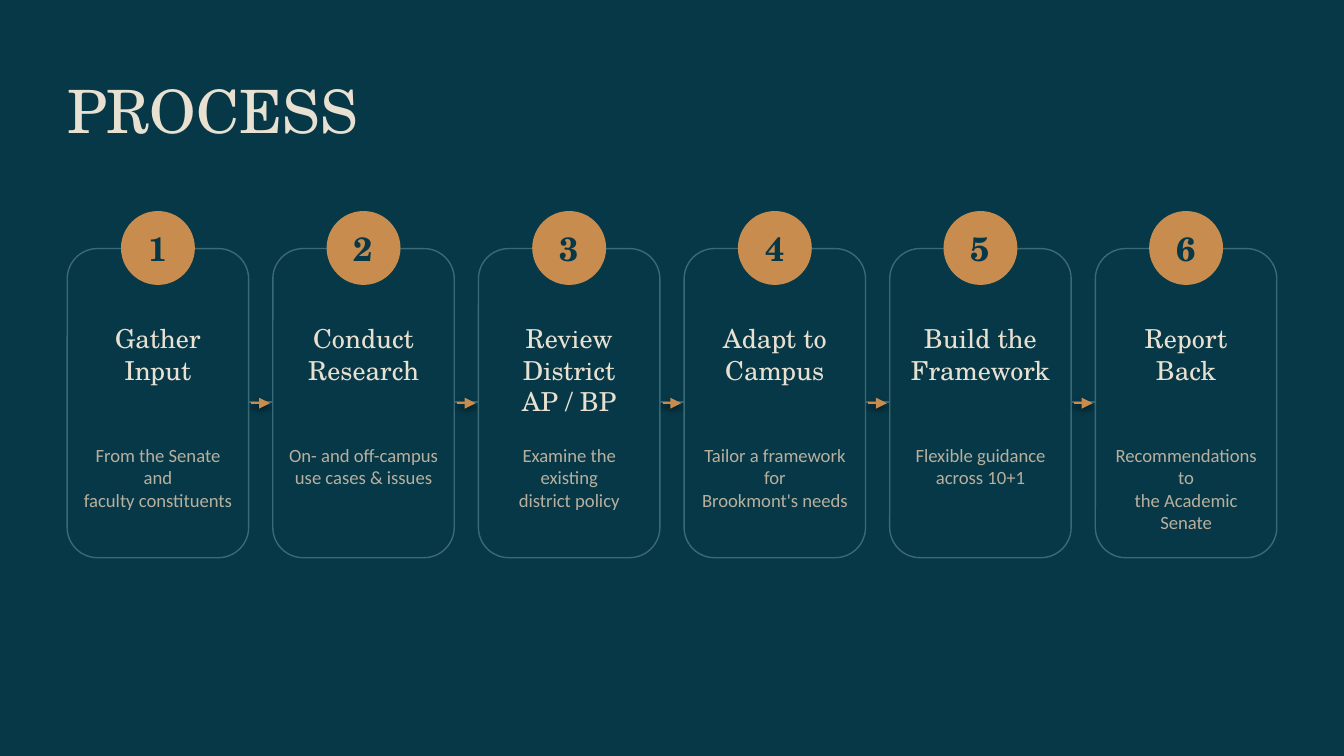
from dataclasses import dataclass

from lxml import etree
from pptx import Presentation
from pptx import util as u
from pptx.dml.color import RGBColor
from pptx.enum import shapes, text
from pptx.oxml.ns import qn

PX = u.Inches(1) // 200
SERIF, SANS = "TeX Gyre Schola", "Calibri"
COLORS = {
    "navy": "073847",
    "teal": "3A6A76",
    "copper": "C78C4E",
    "cream": "E8E1D1",
    "sand": "B8B09E",
    "shadow": "000000",
}

SLIDE_W, SLIDE_H = 2000, 1125
MARGIN = 100
CARD_TOP, CARD_W, CARD_H = 370, 270, 460
PITCH = 306
BADGE = 110
HEADING_TOP, HEADING_W, HEADING_H = 480, 250, 190
DETAIL_TOP, DETAIL_W, DETAIL_H = 660, 230, 170
ARROW_INSET = 4
TRACK_Y = 598


@dataclass(frozen=True)
class Step:
    heading: tuple[str, ...]
    detail: tuple[str, ...]


@dataclass(frozen=True)
class Box:
    left: int
    top: int
    width: int
    height: int

    def emu(self) -> list[int]:
        return [n * PX for n in (self.left, self.top, self.width, self.height)]


@dataclass(frozen=True)
class Style:
    size: int
    face: str
    color: str
    bold: bool = False
    align: text.PP_ALIGN = text.PP_ALIGN.CENTER


TITLE = Style(32, SERIF, "cream", align=text.PP_ALIGN.LEFT)
NUMBER = Style(18, SERIF, "navy", bold=True)
HEADING = Style(14, SERIF, "cream")
DETAIL = Style(10, SANS, "sand")

STEPS = [
    Step(("Gather", "Input"), ("From the Senate and", "faculty constituents")),
    Step(("Conduct", "Research"), ("On- and off-campus", "use cases & issues")),
    Step(("Review District", "AP / BP"), ("Examine the existing", "district policy")),
    Step(("Adapt to", "Campus"), ("Tailor a framework for", "Brookmont's needs")),
    Step(("Build the", "Framework"), ("Flexible guidance", "across 10+1")),
    Step(("Report", "Back"), ("Recommendations to", "the Academic Senate")),
]


def rgb(name: str) -> RGBColor:
    return RGBColor.from_string(COLORS[name])


def write(frame, lines: tuple[str, ...], style: Style) -> None:
    frame.margin_left = frame.margin_right = 0
    frame.margin_top = frame.margin_bottom = 0
    frame.word_wrap = True
    frame.text = "\n".join(lines)
    for paragraph in frame.paragraphs:
        paragraph.alignment = style.align
        paragraph.font.size = u.Pt(style.size)
        paragraph.font.name = style.face
        paragraph.font.bold = style.bold
        paragraph.font.color.rgb = rgb(style.color)


def add_text(slide, box: Box, lines: tuple[str, ...], style: Style) -> None:
    frame = slide.shapes.add_textbox(*box.emu()).text_frame
    write(frame, lines, style)
    frame.auto_size = text.MSO_AUTO_SIZE.SHAPE_TO_FIT_TEXT


def add_line(slide, x1: int, x2: int, y: int, color: str, weight: float, arrow: bool = False) -> None:
    line = slide.shapes.add_connector(
        shapes.MSO_CONNECTOR.STRAIGHT, x1 * PX, y * PX, x2 * PX, y * PX)
    line.line.color.rgb = rgb(color)
    line.line.width = u.Pt(weight)
    if arrow:
        etree.SubElement(line.line._get_or_add_ln(), qn("a:tailEnd"), type="triangle")
    effects = etree.SubElement(line._element.spPr, qn("a:effectLst"))
    shadow = etree.SubElement(
        effects, qn("a:outerShdw"), blurRad=str(u.Pt(3.1)), dist=str(u.Pt(1.6)),
        dir="5400000", rotWithShape="0")
    tint = etree.SubElement(shadow, qn("a:srgbClr"), val=COLORS["shadow"])
    etree.SubElement(tint, qn("a:alpha"), val="38000")


def add_card(slide, left: int) -> None:
    card = slide.shapes.add_shape(
        shapes.MSO_SHAPE.ROUNDED_RECTANGLE, *Box(left, CARD_TOP, CARD_W, CARD_H).emu())
    card.shadow.inherit = False
    card.fill.solid()
    card.fill.fore_color.rgb = rgb("navy")
    card.line.color.rgb = rgb("teal")
    card.line.width = u.Pt(0.75)


def add_badge(slide, left: int, number: int) -> None:
    badge = slide.shapes.add_shape(
        shapes.MSO_SHAPE.OVAL, *Box(left, CARD_TOP - BADGE // 2 - 1, BADGE, BADGE).emu())
    badge.shadow.inherit = False
    badge.fill.solid()
    badge.fill.fore_color.rgb = rgb("copper")
    badge.line.fill.background()
    write(badge.text_frame, (str(number),), NUMBER)
    badge.text_frame.vertical_anchor = text.MSO_ANCHOR.MIDDLE


def add_step(slide, index: int, step: Step) -> None:
    left = MARGIN + index * PITCH
    add_card(slide, left)
    add_badge(slide, left + (CARD_W - BADGE) // 2, index + 1)
    add_text(slide, Box(left + (CARD_W - HEADING_W) // 2, HEADING_TOP, HEADING_W, HEADING_H),
             step.heading, HEADING)
    add_text(slide, Box(left + (CARD_W - DETAIL_W) // 2, DETAIL_TOP, DETAIL_W, DETAIL_H),
             step.detail, DETAIL)
    if index < len(STEPS) - 1:
        add_line(slide, left + CARD_W + ARROW_INSET, left + PITCH - ARROW_INSET,
                 CARD_TOP + CARD_H // 2, "copper", 1.25, arrow=True)


def main() -> None:
    deck = Presentation()
    deck.slide_width, deck.slide_height = SLIDE_W * PX, SLIDE_H * PX
    slide = deck.slides.add_slide(deck.slide_layouts[6])
    slide.background.fill.solid()
    slide.background.fill.fore_color.rgb = rgb("navy")

    add_text(slide, Box(MARGIN, 110, SLIDE_W - 2 * MARGIN, 108), ("PROCESS",), TITLE)
    add_line(slide, 180, SLIDE_W - 180, TRACK_Y, "teal", 1)
    for index, step in enumerate(STEPS):
        add_step(slide, index, step)

    deck.save("out.pptx")


if __name__ == "__main__":
    main()
